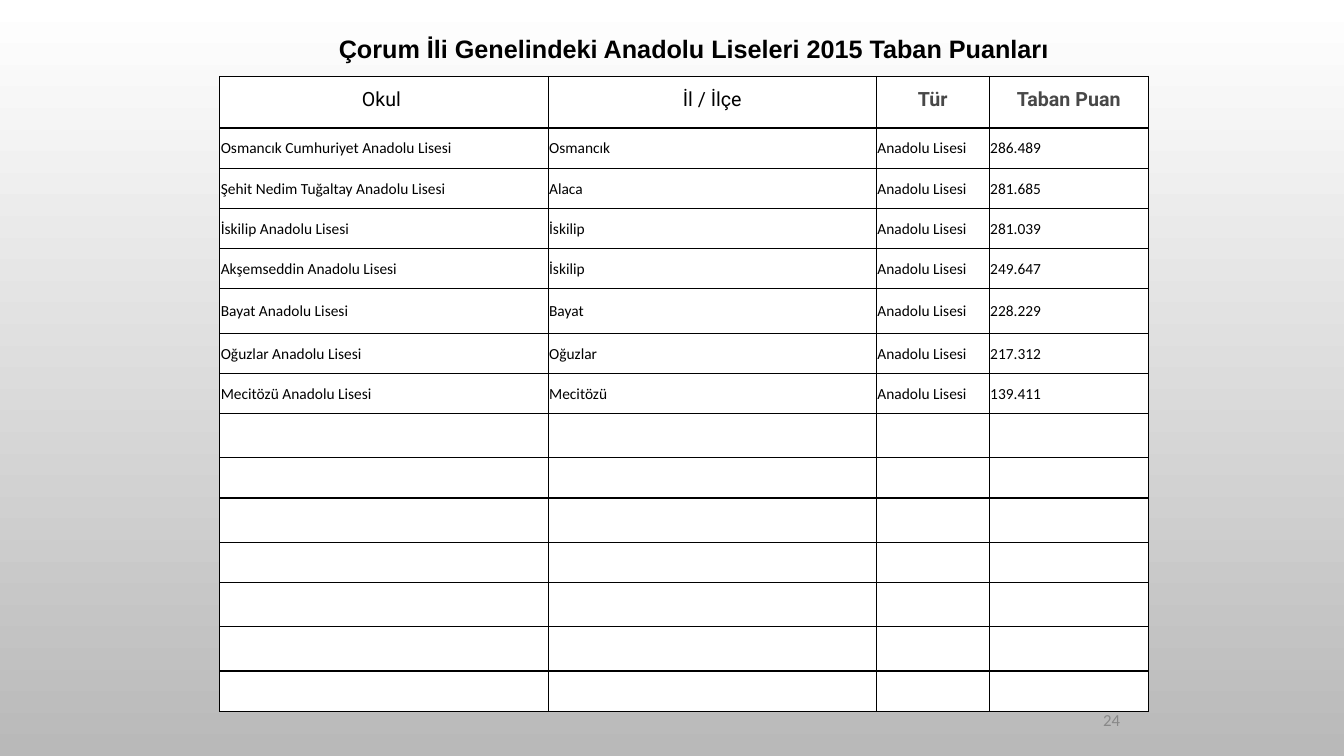
import pptx
import pptx.util
import pptx.dml.color
import pptx.enum.text
import pptx.oxml
import pptx.oxml.ns

Inches, Pt = pptx.util.Inches, pptx.util.Pt
RGBColor = pptx.dml.color.RGBColor
PP_ALIGN = pptx.enum.text.PP_ALIGN
MIDDLE = pptx.enum.text.MSO_ANCHOR.MIDDLE

THEME = {
    "black": "000000", "white": "FFFFFF", "shade": "B9B9B9",
    "heading_grey": "484848", "number_grey": "888888",
    "title": ("Arial", 18), "heading": ("Roboto", 14),
    "body": ("Calibri", 11), "number": ("Calibri", 12),
}


def style(paragraph, role, color="black", bold=False):
    family, size = THEME[role]
    paragraph.font.name = family
    paragraph.font.size = Pt(size)
    paragraph.font.bold = bold
    paragraph.font.color.rgb = RGBColor.from_string(THEME[color])


def set_margins(holder, left, top, right, bottom):
    holder.margin_left, holder.margin_top = Inches(left), Inches(top)
    holder.margin_right, holder.margin_bottom = Inches(right), Inches(bottom)


deck = pptx.Presentation()
deck.slide_width, deck.slide_height = Inches(13.33), Inches(7.5)
slide = deck.slides.add_slide(deck.slide_layouts[6])

backdrop = slide.background.fill
backdrop.gradient()
backdrop.gradient_angle = 270
for stop, position, color in zip(backdrop.gradient_stops, (0, 1), ("white", "shade")):
    stop.position = position
    stop.color.rgb = RGBColor.from_string(THEME[color])

left, top, right, bottom = Inches(8.83), Inches(7), Inches(11.16), Inches(7.29)
number_outline = slide.shapes.build_freeform(left, top)
number_outline.add_line_segments([(right, top), (right, bottom), (left, bottom)], close=True)
number_frame = number_outline.convert_to_shape()
number_frame.shadow.inherit = False
number_frame.fill.background()
number_frame.line.fill.background()
page_number = number_frame.text_frame
page_number.word_wrap = True
page_number.vertical_anchor = MIDDLE
set_margins(page_number, 0.05, 0.05, 0.05, 0.05)
page_number.text = "24"
page_number.paragraphs[0].alignment = PP_ALIGN.RIGHT
style(page_number.paragraphs[0], "number", "number_grey")

headings = [("Okul ", "black", False), ("İl / İlçe", "black", False),
            ("Tür", "heading_grey", True), ("Taban Puan", "heading_grey", True)]
schools = [
    ("Osmancık Cumhuriyet", "Osmancık", "286.489"),
    ("Şehit Nedim Tuğaltay", "Alaca", "281.685"),
    ("İskilip", "İskilip", "281.039"),
    ("Akşemseddin", "İskilip", "249.647"),
    ("Bayat", "Bayat", "228.229"),
    ("Oğuzlar", "Oğuzlar", "217.312"),
    ("Mecitözü", "Mecitözü", "139.411"),
]
kind = "Anadolu Lisesi"
table_width, table_height = 9.21, 6.3
column_shares = [3.26, 3.26, 1.12, 1.58]
tall_rows = {5, 8, 10, 12, 13}
row_shares = [0.51] + [0.44 if row in tall_rows else 0.4 for row in range(1, 15)]

scores = slide.shapes.add_table(
    len(row_shares), len(column_shares), Inches(2.18), Inches(0.76),
    Inches(table_width), Inches(table_height)).table
scores.first_row = scores.horz_banding = False
for column, share in zip(scores.columns, column_shares):
    column.width = Inches(table_width * share / sum(column_shares))
for row, share in zip(scores.rows, row_shares):
    row.height = Inches(table_height * share / sum(row_shares))

for cell in scores.iter_cells():
    cell.fill.solid()
    cell.fill.fore_color.rgb = RGBColor.from_string(THEME["white"])
    cell.vertical_anchor = MIDDLE
    set_margins(cell, 0.01, 0.01, 0.01, 0)
    style(cell.text_frame.paragraphs[0], "body")
    for order, side in enumerate(("lnL", "lnR", "lnT", "lnB")):
        border = pptx.oxml.parse_xml(
            f'<a:{side} {pptx.oxml.ns.nsdecls("a")} w="{Pt(1)}"><a:solidFill>'
            f'<a:srgbClr val="{THEME["black"]}"/></a:solidFill></a:{side}>')
        cell._tc.get_or_add_tcPr().insert(order, border)

for column, (heading, color, bold) in enumerate(headings):
    cell = scores.cell(0, column)
    set_margins(cell, 0.06, 0.06, 0.06, 0.06)
    cell.text = heading
    paragraph = cell.text_frame.paragraphs[0]
    paragraph.alignment = PP_ALIGN.CENTER
    paragraph.line_spacing = Pt(12.8)
    paragraph.space_after = Pt(10.1)
    style(paragraph, "heading", color, bold)

for row, (school, district, score) in enumerate(schools, start=1):
    for column, entry in enumerate((f"{school} {kind}", district, kind, score)):
        cell = scores.cell(row, column)
        cell.text = entry
        style(cell.text_frame.paragraphs[0], "body")

title = slide.shapes.add_textbox(Inches(2.57), Inches(0.28), Inches(8.01), Inches(0.4)).text_frame
title.word_wrap = True
set_margins(title, 0.79, 0.05, 0, 0.05)
title.text = "Çorum İli Genelindeki Anadolu Liseleri 2015 Taban Puanları"
style(title.paragraphs[0], "title", bold=True)

deck.save("out.pptx")
